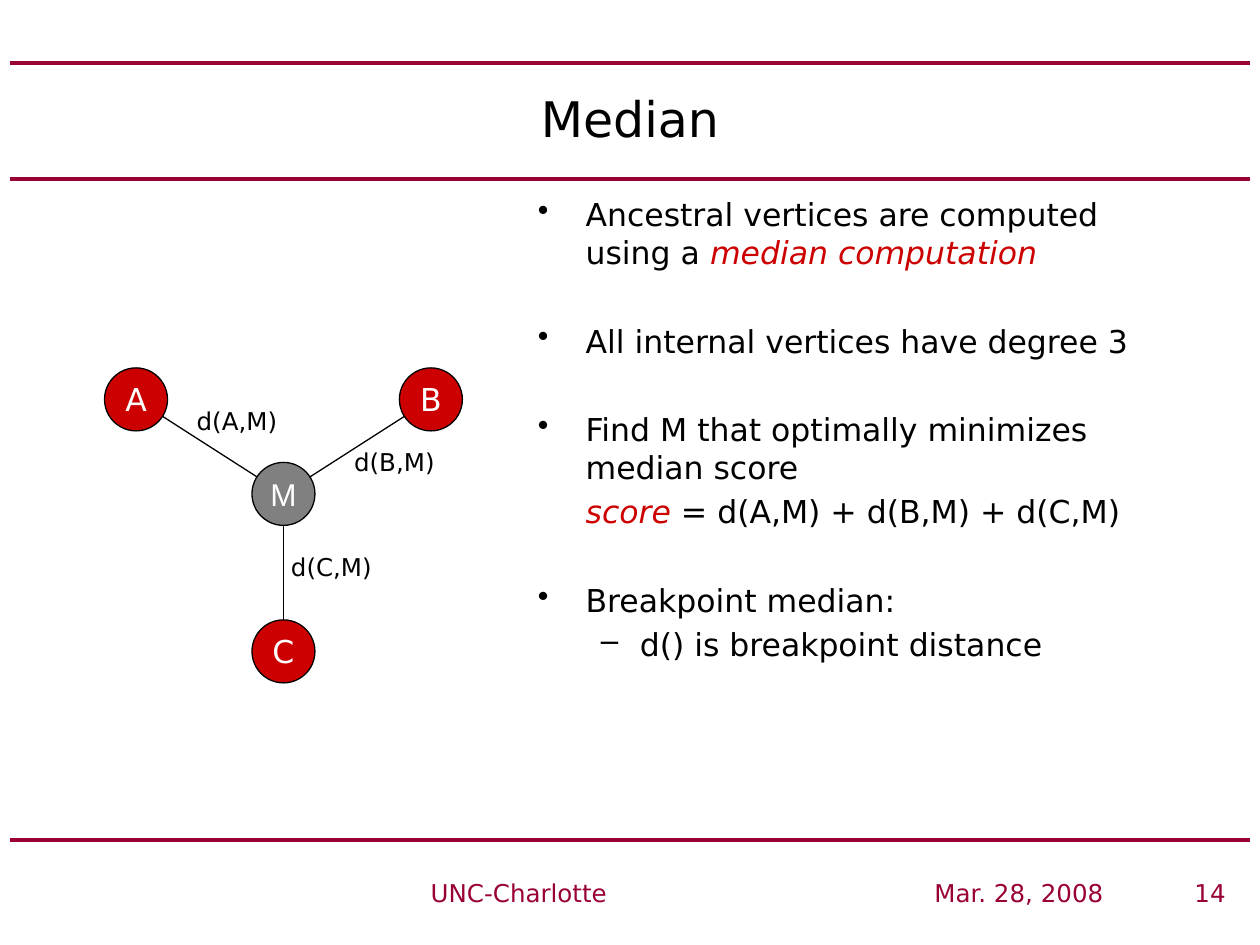
from dataclasses import dataclass

import pptx
import pptx.dml.color
import pptx.enum.shapes
import pptx.enum.text
import pptx.oxml
import pptx.oxml.ns
import pptx.util
from pptx.util import Inches

FONT = "DejaVu Sans"
BLACK, WHITE, RED, GREY, MAROON = "000000", "FFFFFF", "CC0000", "808080", "990033"
ALIGN = pptx.enum.text.PP_ALIGN
ANCHOR = pptx.enum.text.MSO_ANCHOR
NODE_SIZE = 0.5


@dataclass(frozen=True)
class Node:
    name: str
    x: float
    y: float
    fill: str = RED
    font: str = FONT


@dataclass(frozen=True)
class Label:
    text: str
    left: float
    top: float


@dataclass(frozen=True)
class Run:
    text: str
    emphasized: bool = False


@dataclass(frozen=True)
class Item:
    runs: tuple[Run, ...]
    bullet: str = ""
    margin: float = 0.38
    hanging: float = 0.38
    space_before: float = 3.7


MEDIAN = Node("M", 2.25, 3.92, GREY, "Arial")
LEAVES = (Node("A", 1.08, 3.17), Node("B", 3.42, 3.17), Node("C", 2.25, 5.17))
LABELS = (
    Label("d(A,M)", 1.17, 3.17),
    Label("d(B,M)", 2.42, 3.5),
    Label("d(C,M)", 1.92, 4.33),
)
SECTION_GAP = 29
ITEMS = (
    Item((Run("Ancestral vertices are computed using a "), Run("median computation", True)),
         "•", space_before=0),
    Item((Run("All internal vertices have degree 3"),), "•", space_before=SECTION_GAP),
    Item((Run("Find M that optimally minimizes median score"),), "•", space_before=SECTION_GAP),
    Item((Run("score", True), Run(" = d(A,M) + d(B,M) + d(C,M)")), hanging=0),
    Item((Run("Breakpoint median:"),), "•", space_before=SECTION_GAP),
    Item((Run("d() is breakpoint distance"),), "–", margin=0.81, hanging=0.31),
)


def color(value: str) -> pptx.dml.color.RGBColor:
    return pptx.dml.color.RGBColor.from_string(value)


def append_element(parent, tag: str, **attributes: str):
    element = pptx.oxml.ns.qn(tag)
    child = parent.makeelement(element, attributes)
    parent.append(child)
    return child


def format_font(font, size: float, value: str, name: str = FONT, italic: bool = False) -> None:
    formats = {"size": pptx.util.Pt(size), "name": name, "italic": italic}
    for attribute, setting in formats.items():
        setattr(font, attribute, setting)
    font.color.rgb = color(value)


def add_line(slide, start: tuple[float, float], end: tuple[float, float],
             value: str, width: float) -> None:
    line = slide.shapes.add_connector(
        pptx.enum.shapes.MSO_CONNECTOR.STRAIGHT, *map(Inches, start + end))
    line.line.color.rgb = color(value)
    line.line.width = pptx.util.Pt(width)
    append_element(line._element.spPr, "a:effectLst")


def add_text_box(slide, left: float, top: float, width: float, height: float,
                 anchor=ANCHOR.TOP):
    frame = slide.shapes.add_textbox(*map(Inches, (left, top, width, height))).text_frame
    frame.word_wrap = True
    frame.vertical_anchor = anchor
    return frame


def write(frame, text: str, size: float, value: str, alignment=ALIGN.CENTER,
          font: str = FONT) -> None:
    paragraph = frame.paragraphs[0]
    paragraph.alignment = alignment
    run = paragraph.add_run()
    run.text = text
    format_font(run.font, size, value, font)


def add_node(slide, node: Node) -> None:
    shape = slide.shapes.add_shape(
        pptx.enum.shapes.MSO_SHAPE.OVAL,
        Inches(node.x - NODE_SIZE / 2), Inches(node.y - NODE_SIZE / 2),
        Inches(NODE_SIZE), Inches(NODE_SIZE))
    shape.shadow.inherit = False
    shape.fill.solid()
    shape.fill.fore_color.rgb = color(node.fill)
    shape.line.color.rgb = color(BLACK)
    shape.line.width = pptx.util.Pt(0.75)
    frame = shape.text_frame
    for side in ("left", "top", "right", "bottom"):
        setattr(frame, f"margin_{side}", 0)
    frame.vertical_anchor = ANCHOR.MIDDLE
    frame.word_wrap = False
    write(frame, node.name, 18, WHITE, font=node.font)


def add_item(paragraph, item: Item) -> None:
    properties = paragraph._p.get_or_add_pPr()
    properties.set("marL", str(Inches(item.margin)))
    properties.set("indent", str(-Inches(item.hanging)))
    if item.bullet:
        append_element(properties, "a:buChar", char=item.bullet)
    else:
        append_element(properties, "a:buNone")
    paragraph.space_before = pptx.util.Pt(item.space_before)
    for part in item.runs:
        run = paragraph.add_run()
        run.text = part.text
        format_font(run.font, 18, RED if part.emphasized else BLACK, italic=part.emphasized)


def add_footer(slide) -> None:
    """Align each footer entry to the right at its own tab stop."""
    frame = add_text_box(slide, 2.83, 6.92, 7, 0.33)
    properties = frame.paragraphs[0]._p.get_or_add_pPr()
    stops = append_element(properties, "a:tabLst")
    for position in (1.89, 5.83, 6.8):
        append_element(stops, "a:tab", pos=str(Inches(position)), algn="r")
    write(frame, "\tUNC-Charlotte\tMar. 28, 2008\t14", 14, MAROON, ALIGN.LEFT)


def main() -> None:
    presentation = pptx.Presentation()
    presentation.slide_width = Inches(10)
    presentation.slide_height = Inches(7.5)
    slide = presentation.slides.add_slide(presentation.slide_layouts[6])

    for y in (0.5, 1.42, 6.67):
        add_line(slide, (0.08, y), (9.92, y), MAROON, 2.25)
    write(add_text_box(slide, 0.5, 0.5, 9, 0.87, ANCHOR.MIDDLE), "Median", 28, BLACK)
    add_footer(slide)

    for leaf in LEAVES:
        add_line(slide, (MEDIAN.x, MEDIAN.y), (leaf.x, leaf.y), BLACK, 0.75)
    for node in (*LEAVES, MEDIAN):
        add_node(slide, node)
    for label in LABELS:
        write(add_text_box(slide, label.left, label.top, 1.42, 0.33), label.text, 14, BLACK)

    body = add_text_box(slide, 4.17, 1.5, 5.33, 5.08)
    for index, item in enumerate(ITEMS):
        add_item(body.add_paragraph() if index else body.paragraphs[0], item)

    presentation.save("out.pptx")


if __name__ == "__main__":
    main()
